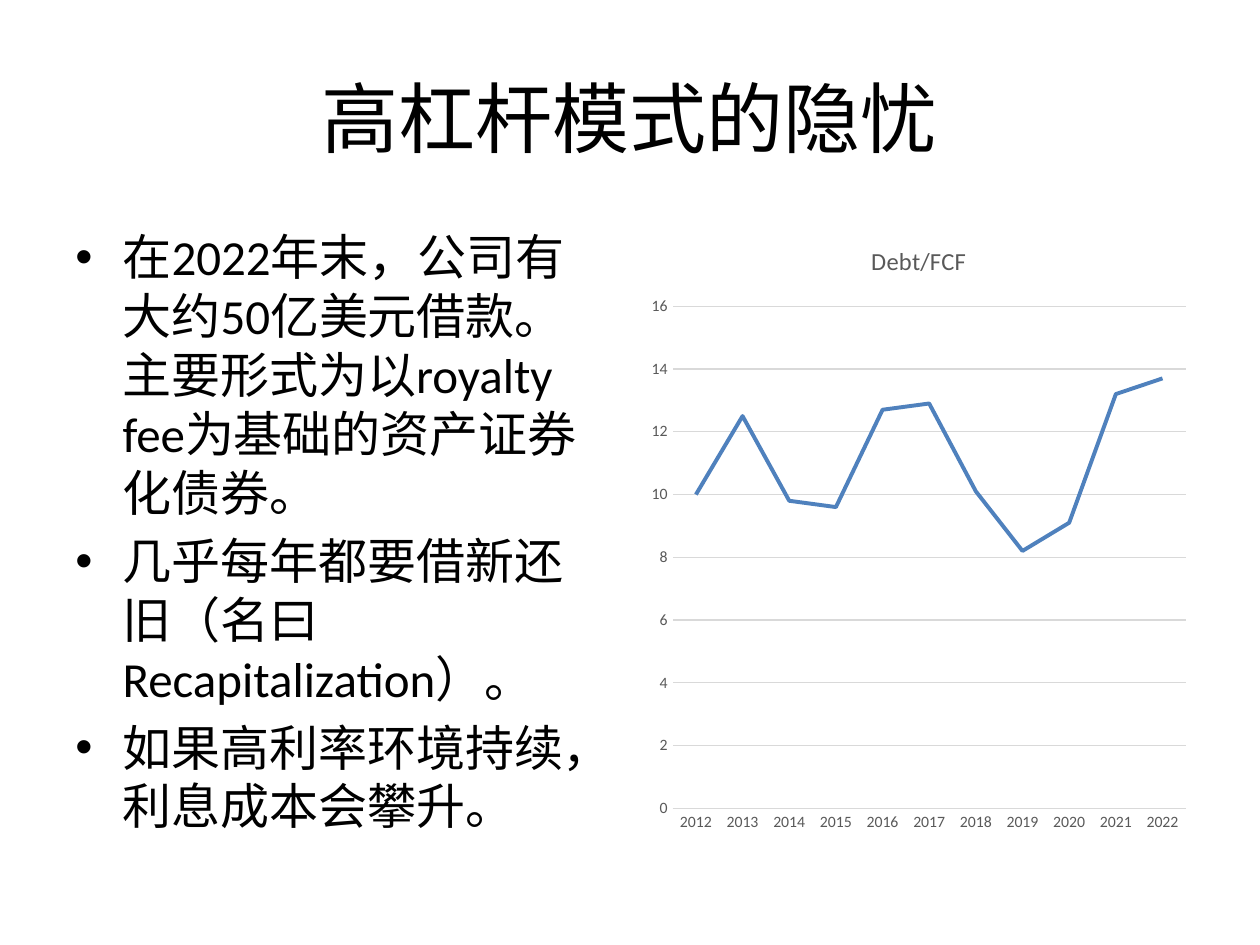
from lxml import etree
from pptx import Presentation
from pptx.chart.data import CategoryChartData
from pptx.dml.color import RGBColor
from pptx.enum import chart as ch, text as tx
from pptx.oxml import ns
from pptx.util import Pt

COLORS = {"ink": "000000", "label": "595959", "grid": "D9D9D9", "debt": "4F81BD"}
FONT = "Calibri"
INDENT = Pt(27)


def rgb(name):
    return RGBColor.from_string(COLORS[name])


def style_font(font, size, color):
    font.name = FONT
    font.size = Pt(size)
    font.bold = False
    font.color.rgb = rgb(color)


def add_bullet(paragraph):
    properties = paragraph._p.get_or_add_pPr()
    properties.set("marL", str(INDENT))
    properties.set("indent", str(-INDENT))
    etree.SubElement(properties, ns.qn("a:buFont")).set("typeface", "Arial")
    etree.SubElement(properties, ns.qn("a:buChar")).set("char", "•")


def write(slide, box, paragraphs, size=28, color="ink", align=tx.PP_ALIGN.LEFT,
          anchor=tx.MSO_ANCHOR.TOP, bullets=False, gap=0):
    frame = slide.shapes.add_textbox(*box).text_frame
    frame.word_wrap = True
    frame.vertical_anchor = anchor
    for index, content in enumerate(paragraphs):
        paragraph = frame.add_paragraph() if index else frame.paragraphs[0]
        paragraph.alignment = align
        if index:
            paragraph.space_before = Pt(gap)
        if bullets:
            add_bullet(paragraph)
        run = paragraph.add_run()
        run.text = content
        style_font(run.font, size, color)


def add_heading(slide, box):
    write(slide, box, ["高杠杆模式的隐忧"], size=44,
          align=tx.PP_ALIGN.CENTER, anchor=tx.MSO_ANCHOR.MIDDLE)


def add_concerns(slide, box):
    concerns = [
        "在2022年末，公司有大约50亿美元借款。主要形式为以royalty fee为基础的资产证券化债券。",
        "几乎每年都要借新还旧（名曰Recapitalization）。",
        "如果高利率环境持续，利息成本会攀升。",
    ]
    write(slide, box, concerns, bullets=True, gap=5.6)


def add_debt_chart(slide, box):
    data = CategoryChartData()
    data.categories = [str(year) for year in range(2012, 2023)]
    data.add_series("Debt/FCF", [10, 12.5, 9.8, 9.6, 12.7, 12.9, 10.1, 8.2, 9.1, 13.2, 13.7])
    chart = slide.shapes.add_chart(ch.XL_CHART_TYPE.LINE, *box, data).chart
    style_font(chart.font, 10, "ink")
    chart.has_legend = False
    chart.has_title = True
    title = chart.chart_title.text_frame
    title.text = "Debt/FCF"
    style_font(title.paragraphs[0].runs[0].font, 14, "label")
    chart.chart_title.include_in_layout = False

    years, ratios = chart.category_axis, chart.value_axis
    for axis in (years, ratios):
        axis.major_tick_mark = ch.XL_TICK_MARK.NONE
        axis.minor_tick_mark = ch.XL_TICK_MARK.NONE
        style_font(axis.tick_labels.font, 9, "label")
    ratios.minimum_scale, ratios.maximum_scale, ratios.major_unit = 0, 16, 2
    ratios.format.line.fill.background()
    for line in (years.format.line, ratios.major_gridlines.format.line):
        line.color.rgb = rgb("grid")
        line.width = Pt(0.75)

    plot = chart.plots[0]
    plot.vary_by_categories = False
    debt = plot.series[0]
    debt.smooth = False
    debt.marker.style = ch.XL_MARKER_STYLE.NONE
    debt.format.line.color.rgb = rgb("debt")
    debt.format.line.width = Pt(2.25)


def main():
    deck = Presentation()
    deck.slide_width, deck.slide_height = Pt(720), Pt(540)
    slide = deck.slides.add_slide(deck.slide_layouts[6])
    margin, column, top, height = Pt(36), Pt(318), Pt(126), Pt(356.4)
    add_heading(slide, (margin, Pt(21.6), deck.slide_width - 2 * margin, Pt(90)))
    add_concerns(slide, (margin, top, column, height))
    add_debt_chart(slide, (deck.slide_width - margin - column, top, column, height))
    deck.save("out.pptx")


if __name__ == "__main__":
    main()
